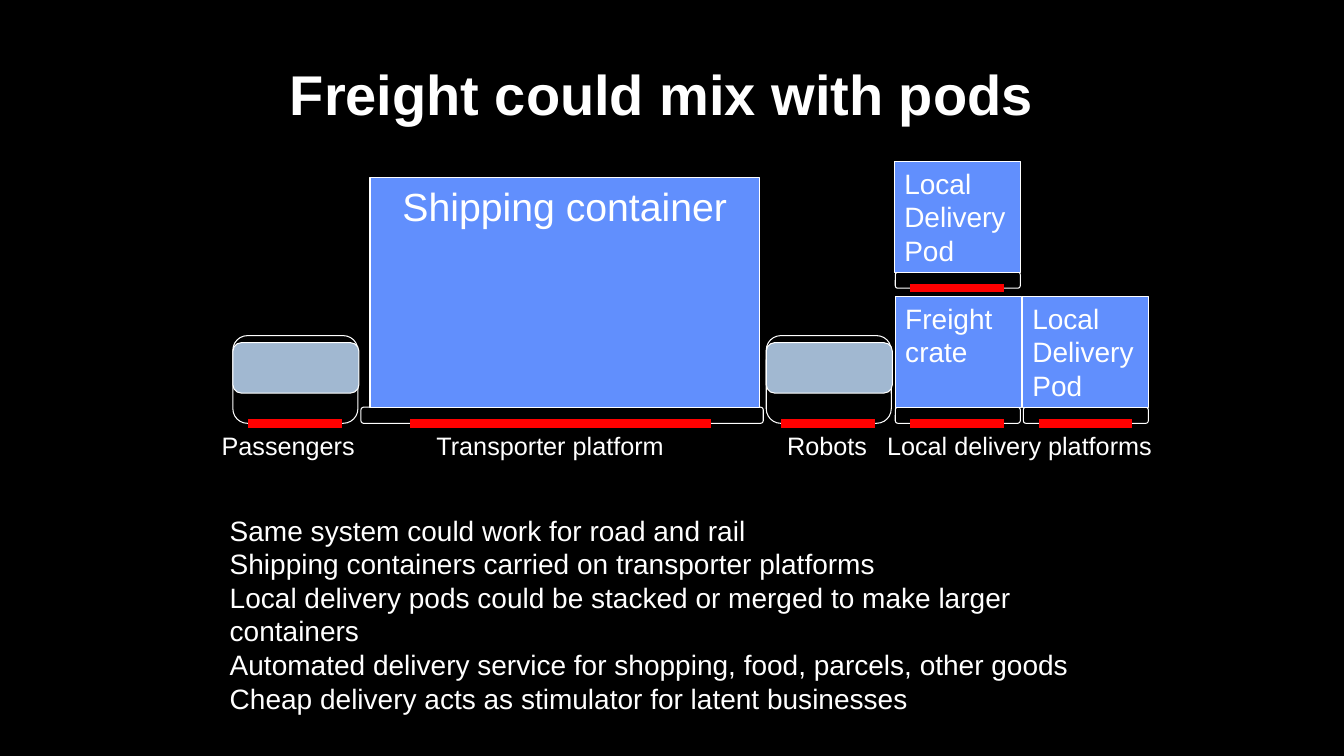
"""Build the slide on mixing freight with passenger pods."""
from dataclasses import dataclass

from pptx import Presentation
from pptx.dml.color import RGBColor
from pptx.enum.shapes import MSO_CONNECTOR, MSO_SHAPE
from pptx.enum.text import MSO_ANCHOR, PP_ALIGN
from pptx.oxml.ns import qn
from pptx.slide import Slide
from pptx.text.text import TextFrame
from pptx.util import Inches, Pt
from lxml import etree

RECT, ROUND = MSO_SHAPE.RECTANGLE, MSO_SHAPE.ROUNDED_RECTANGLE
STRAIGHT = MSO_CONNECTOR.STRAIGHT
LEFT, CENTER = PP_ALIGN.LEFT, PP_ALIGN.CENTER
TOP, MIDDLE = MSO_ANCHOR.TOP, MSO_ANCHOR.MIDDLE


@dataclass(frozen=True)
class Theme:
    """Colours, font and type sizes of the slide."""
    background: RGBColor = RGBColor(0x00, 0x00, 0x00)
    ink: RGBColor = RGBColor(0xFF, 0xFF, 0xFF)
    cargo: RGBColor = RGBColor(0x61, 0x8F, 0xFD)
    window: RGBColor = RGBColor(0xA1, 0xB8, 0xD1)
    wheels: RGBColor = RGBColor(0xFF, 0x00, 0x00)
    font: str = "Arial"
    title: int = 40
    container: int = 28
    body: int = 20
    label: int = 18
    outline: float = 0.75
    wheel_line: int = 6


@dataclass(frozen=True)
class Box:
    """Place and size in inches."""
    left: float
    top: float
    width: float
    height: float


@dataclass(frozen=True)
class Platform:
    """Flat carrier with a wheel line along its underside."""
    left: float
    top: float
    width: float = 1.24
    wheel_inset: float = 0.15
    wheel_length: float = 0.93


@dataclass(frozen=True)
class Cargo:
    """Load carried on a platform."""
    text: str
    box: Box
    size: int
    align: PP_ALIGN = LEFT


@dataclass(frozen=True)
class Label:
    """Caption under a vehicle."""
    text: str
    left: float
    width: float


THEME = Theme()
ROAD = 4.2
DECK = 0.16
POD_HEIGHT = 0.87
LABEL_TOP = 4.22
UPPER = 2.7
LOWER = ROAD - DECK
CRATE_WIDTH, CRATE_HEIGHT = 1.25, 1.1
TITLE = "Freight could mix with pods"
POINTS = [
    "Same system could work for road and rail",
    "Shipping containers carried on transporter platforms",
    "Local delivery pods could be stacked or merged to make larger containers",
    "Automated delivery service for shopping, food, parcels, other goods",
    "Cheap delivery acts as stimulator for latent businesses",
]
POD_LEFTS = [2.31, 7.6]
PLATFORMS = [
    Platform(3.58, LOWER, 3.99, 0.49, 2.98),
    Platform(8.88, LOWER),
    Platform(8.88, UPPER),
    Platform(10.15, LOWER),
]
CARGO = [
    Cargo("Shipping container", Box(3.67, 1.76, 3.86, 2.28), THEME.container, CENTER),
    *(Cargo(text, Box(left, deck - CRATE_HEIGHT, CRATE_WIDTH, CRATE_HEIGHT), THEME.body)
      for text, left, deck in [("Local Delivery Pod", 10.14, LOWER),
                               ("Local Delivery Pod", 8.87, UPPER),
                               ("Freight crate", 8.88, LOWER)]),
]
LABELS = [
    Label("Passengers", 2.1, 1.53),
    Label("Transporter platform", 4.23, 2.48),
    Label("Robots", 7.71, 1.0),
    Label("Local delivery platforms", 8.7, 2.85),
]


def lengths(box: Box) -> tuple:
    """Return the box as four slide lengths."""
    return tuple(Inches(v) for v in (box.left, box.top, box.width, box.height))


def write(tf: TextFrame, lines: list[str], size: int, align: PP_ALIGN = LEFT,
          anchor: MSO_ANCHOR = TOP, wrap: bool = True, bold: bool = False) -> None:
    """Fill a text frame with one paragraph per line."""
    tf.word_wrap = wrap
    tf.vertical_anchor = anchor
    style = {"name": THEME.font, "size": Pt(size), "bold": bold}
    for i, line in enumerate(lines):
        p = tf.paragraphs[0] if i == 0 else tf.add_paragraph()
        p.alignment = align
        r = p.add_run()
        r.text = line
        for key, value in style.items():
            setattr(r.font, key, value)
        r.font.color.rgb = THEME.ink


def add_text(s: Slide, box: Box, lines: list[str], size: int, wrap: bool) -> None:
    """Add a plain text box."""
    write(s.shapes.add_textbox(*lengths(box)).text_frame, lines, size, wrap=wrap)


def add_panel(s: Slide, kind: MSO_SHAPE, box: Box, fill: RGBColor | None = None) -> TextFrame:
    """Add an outlined shape and return its text frame."""
    sp = s.shapes.add_shape(kind, *lengths(box))
    sp.shadow.inherit = False
    if fill is None:
        sp.fill.background()
    else:
        sp.fill.solid()
        sp.fill.fore_color.rgb = fill
    sp.line.color.rgb = THEME.ink
    sp.line.width = Pt(THEME.outline)
    return sp.text_frame


def add_wheels(s: Slide, left: float, length: float, y: float) -> None:
    """Add a thick wheel line."""
    line = s.shapes.add_connector(STRAIGHT, Inches(left), Inches(y),
                                  Inches(left + length), Inches(y))
    line.line.color.rgb = THEME.wheels
    line.line.width = Pt(THEME.wheel_line)
    etree.SubElement(line._element.spPr, qn("a:effectLst"))


def add_platform(s: Slide, item: Platform) -> None:
    """Add a platform and its wheels."""
    add_panel(s, ROUND, Box(item.left, item.top, item.width, DECK))
    add_wheels(s, item.left + item.wheel_inset, item.wheel_length, item.top + DECK)


def add_pod(s: Slide, left: float) -> None:
    """Add a windowed pod and its wheels."""
    add_panel(s, ROUND, Box(left, ROAD - POD_HEIGHT, 1.24, POD_HEIGHT))
    add_panel(s, ROUND, Box(left, 3.4, 1.25, 0.5), THEME.window)
    add_wheels(s, left + 0.15, 0.93, ROAD)


def main() -> None:
    """Build and save the slide."""
    prs = Presentation()
    prs.slide_width, prs.slide_height = Inches(13.33), Inches(7.5)
    s = prs.slides.add_slide(prs.slide_layouts[5])
    s.background.fill.solid()
    s.background.fill.fore_color.rgb = THEME.background

    title = s.shapes.title
    title.left, title.top, title.width, title.height = lengths(Box(2.31, 0.3, 8.5, 1.25))
    write(title.text_frame, [TITLE], THEME.title, CENTER, MIDDLE, bold=True)
    add_text(s, Box(2.18, 5.04, 9.29, 1.78), POINTS, THEME.body, wrap=True)

    for platform in PLATFORMS:
        add_platform(s, platform)
    for left in POD_LEFTS:
        add_pod(s, left)
    for cargo in CARGO:
        tf = add_panel(s, RECT, cargo.box, THEME.cargo)
        write(tf, [cargo.text], cargo.size, cargo.align)
    for label in LABELS:
        add_text(s, Box(label.left, LABEL_TOP, label.width, 0.4), [label.text],
                 THEME.label, wrap=False)
    prs.save("out.pptx")


if __name__ == "__main__":
    main()
